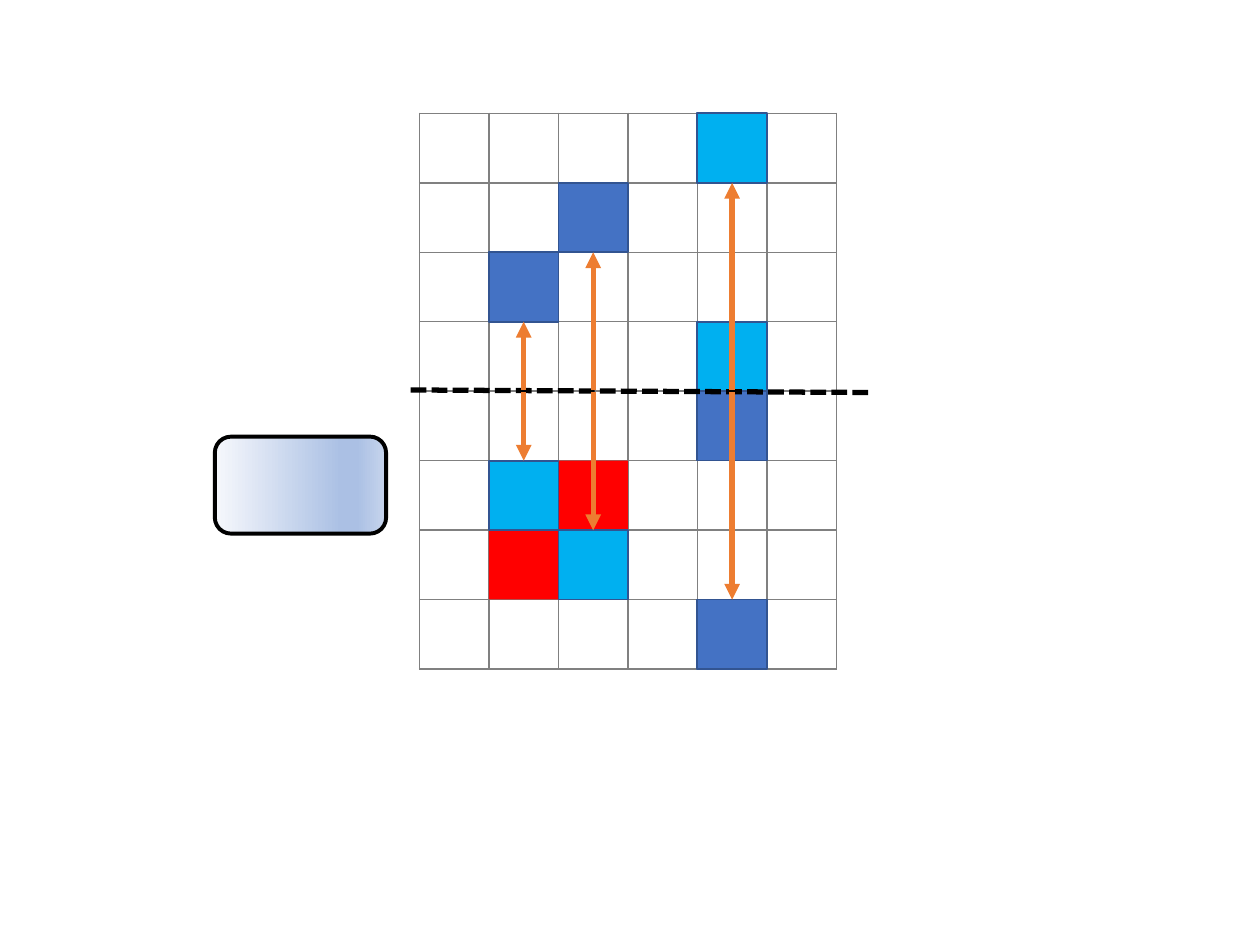
"""Build a slide of a cell grid whose squares mirror across a dashed axis."""
from lxml import etree
from pptx import Presentation
from pptx.dml.color import RGBColor
from pptx.enum.dml import MSO_LINE
from pptx.enum.shapes import MSO_CONNECTOR, MSO_SHAPE
from pptx.oxml.ns import qn
from pptx.util import Inches, Pt

RECTANGLE, ROUNDED = MSO_SHAPE.RECTANGLE, MSO_SHAPE.ROUNDED_RECTANGLE
STRAIGHT, DASH = MSO_CONNECTOR.STRAIGHT, MSO_LINE.SQUARE_DOT
BLUE = RGBColor(0x44, 0x72, 0xC4)
LIGHT = RGBColor(0x00, 0xB0, 0xF0)
RED = RGBColor(0xFF, 0x00, 0x00)
EDGE = RGBColor(0x32, 0x54, 0x91)
ORANGE = RGBColor(0xED, 0x7D, 0x31)
BLACK = RGBColor(0x00, 0x00, 0x00)
GRAY = RGBColor(0x80, 0x80, 0x80)
GRADIENT = [(0, "F6F8FC"), (74, "ABC0E4"), (83, "ABC0E4"), (100, "C7D5ED")]

ROWS, COLUMNS = 8, 6
CELL = Inches(4.41 / ROWS)
LEFT, TOP = Inches(3.33), Inches(0.9)
AXIS = TOP + 4 * CELL
GAP = Inches(0.01)
SQUARES = [
    (7, 4, BLUE), (5, 2, RED), (4, 4, BLUE), (3, 4, LIGHT), (6, 1, RED),
    (2, 1, BLUE), (1, 2, BLUE), (0, 4, LIGHT), (5, 1, LIGHT), (6, 2, LIGHT),
]
ARROWS = [(4, 0, 7), (1, 2, 5), (2, 1, 6)]


def add_line(start_x, start_y, end_x, end_y, color):
    line = page.shapes.add_connector(STRAIGHT, start_x, start_y, end_x, end_y)
    line.line.color.rgb = color
    line.line.width = Pt(3)
    etree.SubElement(line._element.spPr, qn("a:effectLst"))
    return line


deck = Presentation()
deck.slide_width, deck.slide_height = Inches(10), Inches(7.5)
page = deck.slides.add_slide(deck.slide_layouts[6])

grid = page.shapes.add_table(ROWS, COLUMNS, LEFT, TOP, COLUMNS * CELL, ROWS * CELL).table
grid.first_row = grid.horz_banding = False
for column in grid.columns:
    column.width = CELL
for row in grid.rows:
    row.height = CELL
for cell in grid.iter_cells():
    properties = cell._tc.get_or_add_tcPr()
    for side in ("lnL", "lnR", "lnT", "lnB"):
        border = etree.SubElement(properties, qn(f"a:{side}"), w=str(Pt(1)))
        paint = etree.SubElement(border, qn("a:solidFill"))
        etree.SubElement(paint, qn("a:srgbClr"), val=str(GRAY))
    cell.fill.background()

squares = {}
for row, column, color in SQUARES:
    square = page.shapes.add_shape(
        RECTANGLE, LEFT + column * CELL, TOP + row * CELL, CELL, CELL)
    square.shadow.inherit = False
    square.fill.solid()
    square.fill.fore_color.rgb = color
    if color == RED:
        square.line.fill.background()
    else:
        square.line.color.rgb = EDGE
        square.line.width = Pt(1)
    squares[row, column] = square

axis = add_line(Inches(6.89), AXIS + GAP, Inches(3.23), AXIS - GAP, BLACK)
axis.line.dash_style = DASH

panel = page.shapes.add_shape(ROUNDED, Inches(2), Inches(3.17), Inches(0.77), Inches(1.36))
panel.rotation = 270
panel.shadow.inherit = False
panel.line.color.rgb = BLACK
panel.line.width = Pt(2.25)
panel.fill.gradient()
panel.fill.gradient_angle = 270
stops = panel._element.spPr.find(qn("a:gradFill")).find(qn("a:gsLst"))
for stop in list(stops):
    stops.remove(stop)
for position, color in GRADIENT:
    stop = etree.SubElement(stops, qn("a:gs"), pos=str(position * 1000))
    etree.SubElement(stop, qn("a:srgbClr"), val=color)

for column, upper, lower in ARROWS:
    middle = LEFT + column * CELL + CELL // 2
    for row, start, side in ((upper, AXIS - GAP, 2), (lower, AXIS + GAP, 0)):
        arrow = add_line(middle, start, middle, start, ORANGE)
        arrow.end_connect(squares[row, column], side)
        etree.SubElement(arrow.line._get_or_add_ln(), qn("a:tailEnd"), type="triangle")

deck.save("out.pptx")
